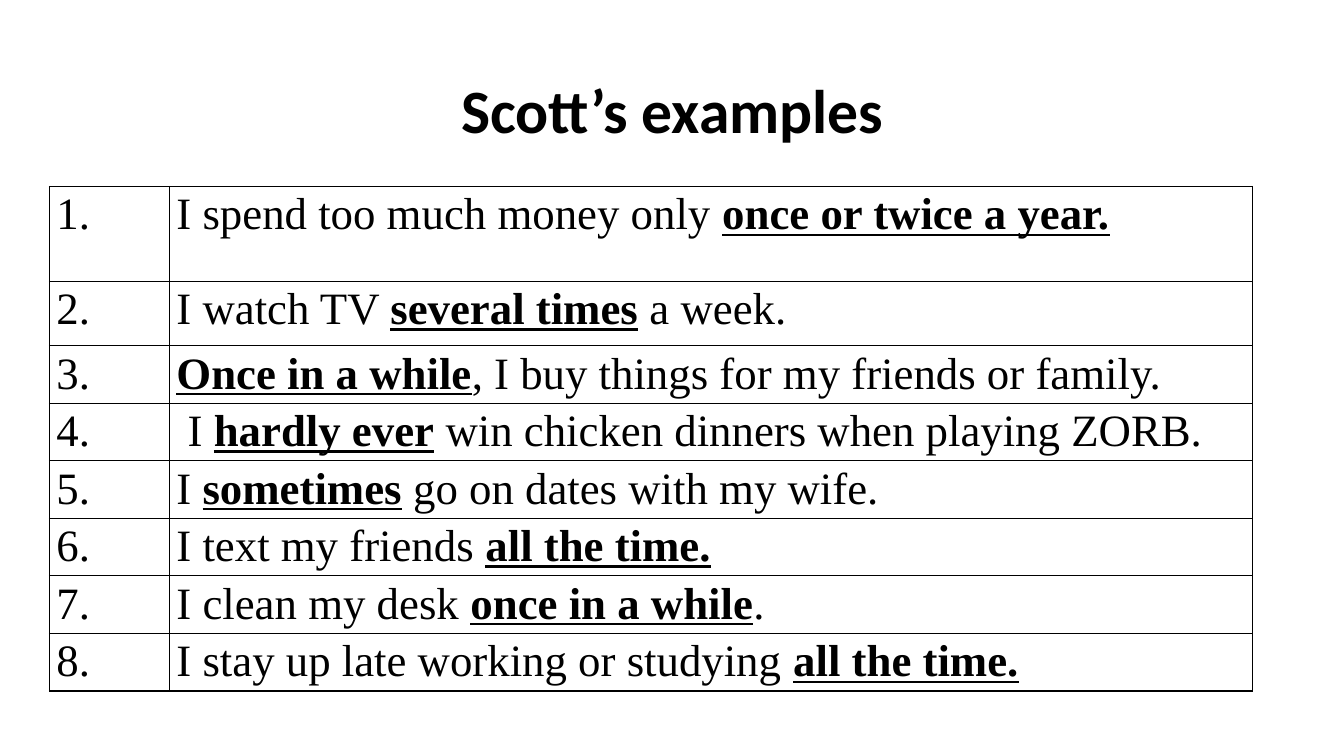
from lxml import etree
from pptx import Presentation
from pptx.dml.color import RGBColor
from pptx.enum.text import MSO_ANCHOR, PP_ALIGN
from pptx.oxml.ns import qn
from pptx.util import Inches, Pt

# Content: asterisks enclose the emphasised frequency expressions
TITLE = "Scott’s examples"
EXAMPLES = [
    "I spend too much money only *once or twice a year.*",
    "I watch TV *several times* a week.",
    "*Once in a while*, I buy things for my friends or family.",
    " I *hardly ever* win chicken dinners when playing ZORB.",
    "I *sometimes* go on dates with my wife.",
    "I text my friends *all the time.*",
    "I clean my desk *once in a while*.",
    "I stay up late working or studying *all the time.*",
]
COLUMN_WIDTHS = [1.19, 10.74]
ROW_HEIGHTS = [0.94, 0.64] + [0.54] * (len(EXAMPLES) - 2)
BLACK = "000000"


def color(hex_value):
    return RGBColor.from_string(hex_value)


def write_text(frame, text, font="Times New Roman", size=32, bold=False,
               align=PP_ALIGN.LEFT, spacing=1.07, after=0):
    paragraph = frame.paragraphs[0]
    paragraph.alignment = align
    paragraph.line_spacing = spacing
    paragraph.space_after = Pt(after)
    for index, part in enumerate(text.split("*")):
        if not part:
            continue
        emphasised = index % 2 == 1
        run = paragraph.add_run()
        run.text = part
        run.font.name = font
        run.font.size = Pt(size)
        run.font.bold = bold or emphasised
        run.font.underline = emphasised
        run.font.color.rgb = color(BLACK)


def format_cell(cell):
    cell.margin_left = cell.margin_right = Inches(0.07)
    cell.margin_top = cell.margin_bottom = 0
    properties = cell._tc.get_or_add_tcPr()
    for side in ("lnL", "lnR", "lnT", "lnB"):
        line = etree.SubElement(properties, qn(f"a:{side}"), w=str(Pt(1)))
        fill = etree.SubElement(line, qn("a:solidFill"))
        etree.SubElement(fill, qn("a:srgbClr"), val=BLACK)
    cell.fill.background()


presentation = Presentation()
presentation.slide_width = Inches(13.33)
presentation.slide_height = Inches(7.5)
slide = presentation.slides.add_slide(presentation.slide_layouts[6])

# Title
title = slide.shapes.add_textbox(Inches(0.92), Inches(0.4), Inches(11.5), Inches(1.45))
title.text_frame.word_wrap = True
title.text_frame.vertical_anchor = MSO_ANCHOR.MIDDLE
write_text(title.text_frame, TITLE, font="Calibri", size=44, bold=True,
           align=PP_ALIGN.CENTER, spacing=0.9)

# Numbered table of examples
table = slide.shapes.add_table(
    len(EXAMPLES), len(COLUMN_WIDTHS), Inches(0.49), Inches(1.85),
    Inches(sum(COLUMN_WIDTHS)), Inches(sum(ROW_HEIGHTS))).table
table.first_row = table.horz_banding = False
for column, width in zip(table.columns, COLUMN_WIDTHS):
    column.width = Inches(width)
for index, (example, height) in enumerate(zip(EXAMPLES, ROW_HEIGHTS)):
    table.rows[index].height = Inches(height)
    number_cell, example_cell = table.rows[index].cells
    write_text(number_cell.text_frame, f"{index + 1}.")
    write_text(example_cell.text_frame, example, after=8)
    format_cell(number_cell)
    format_cell(example_cell)

presentation.save("out.pptx")
